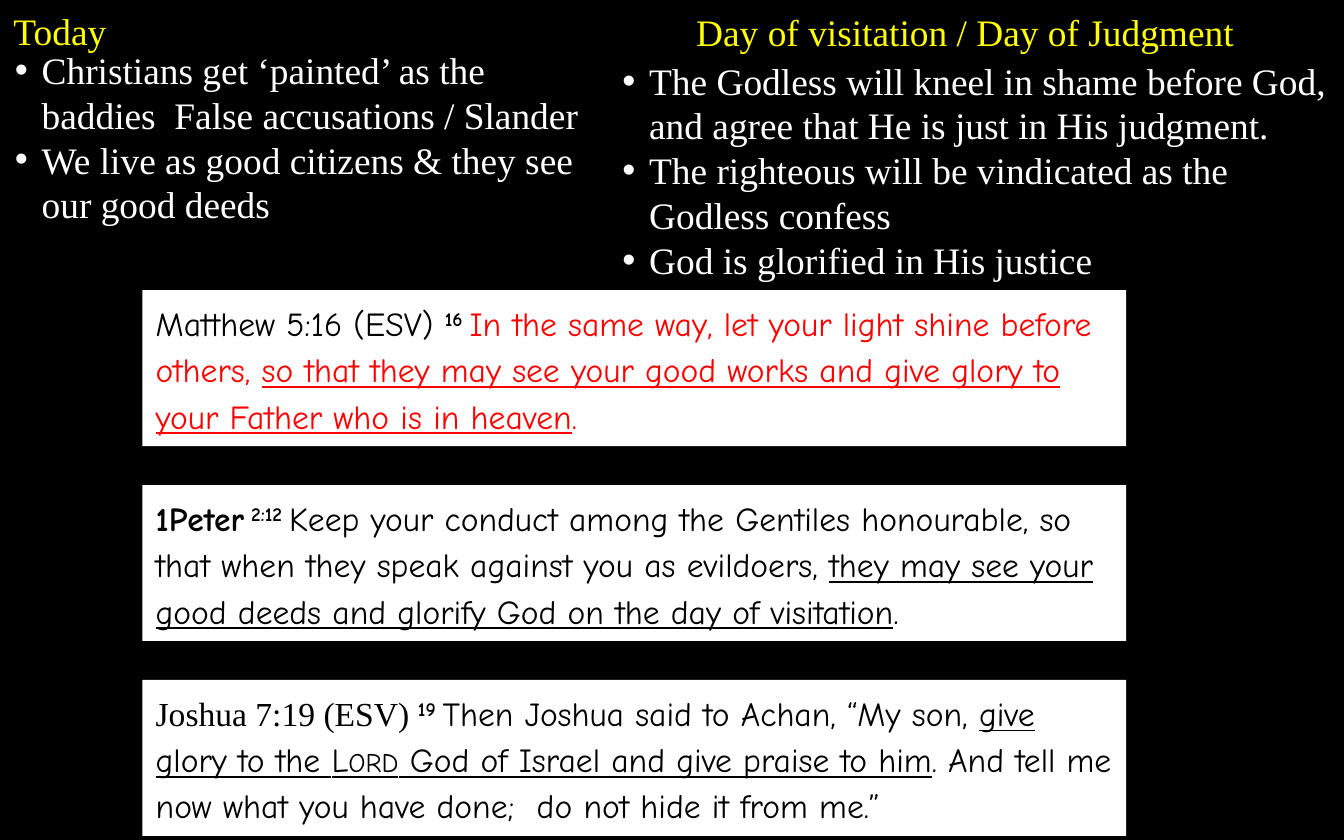
from pptx import Presentation
from pptx.dml.color import RGBColor
from pptx.enum.shapes import MSO_SHAPE
from pptx.enum.text import MSO_ANCHOR, MSO_AUTO_SIZE, PP_ALIGN
from pptx.oxml.ns import qn
from pptx.util import Inches, Pt
from lxml.etree import SubElement

COLOURS = {"black": "000000", "white": "FFFFFF", "yellow": "FFFF00", "red": "FF0000"}
SERIF, HAND = "Times New Roman", "Comic Neue"

# Content: placeholder index, box (left, top, width, height), text
HEADINGS = [
    (1, (0, 0.01, 1.65, 0.44), "Today"),
    (3, (5.08, 0.02, 4.58, 0.44), "Day of visitation / Day of Judgment"),
]
LISTS = [
    (2, (0.01, 0.3, 4.44, 1.45), [
        "Christians get ‘painted’ as the baddies  False accusations / Slander",
        "We live as good citizens & they see our good deeds",
    ]),
    (4, (4.53, 0.38, 5.47, 1.78), [
        "The Godless will kneel in shame before God, and agree that He is just in His judgment.",
        "The righteous will be vindicated as the Godless confess",
        "God is glorified in His justice",
    ]),
]
# Each verse is a list of runs: text and format
NUMBER = {"bold": True, "raised": True}
RED = {"colour": "red"}
UNDERLINED = {"underline": True}
VERSES = [
    [
        ("Matthew 5:16 (ESV) ", {}),
        ("16 ", NUMBER),
        ("In the same way, let your light shine before others, ", RED),
        ("so that they may see your good works and give glory to your Father who is in heaven",
         RED | UNDERLINED),
        (".", RED),
    ],
    [
        ("1Peter", {"bold": True}),
        (" 2:12 ", NUMBER),
        ("Keep your conduct among the Gentiles honourable, so that when they speak "
         "against you as evildoers, ", {}),
        ("they may see your good deeds and glorify God on the day of visitation", UNDERLINED),
        (".", {}),
    ],
    [
        ("Joshua 7:19 (ESV) ", {"font": SERIF}),
        ("19 ", NUMBER),
        ("Then Joshua said to Achan, “My son, ", {}),
        ("give glory to the ", UNDERLINED),
        ("Lord", UNDERLINED | {"small_caps": True}),
        (" God of Israel and give praise to him", UNDERLINED),
        (". And tell me now what you have done;  do not hide it from me.”", {}),
    ],
]
VERSE_LEFT, VERSE_TOP, VERSE_WIDTH, VERSE_HEIGHT, VERSE_STEP = 1.06, 2.16, 7.32, 1.16, 1.45


def rgb(name):
    return RGBColor.from_string(COLOURS[name])


def add_run(paragraph, text, font=HAND, size=18, colour="black", bold=False,
            underline=False, raised=False, small_caps=False):
    run = paragraph.add_run()
    run.text = text
    run.font.name, run.font.size = font, Pt(size)
    run.font.bold, run.font.underline = bold, underline
    run.font.color.rgb = rgb(colour)
    properties = run.font._element
    if raised:
        properties.set("baseline", "30000")
    if small_caps:
        properties.set("cap", "small")


def add_bullet(paragraph):
    properties = paragraph._p.get_or_add_pPr()
    properties.set("marL", str(Inches(0.2)))
    properties.set("indent", str(-Inches(0.2)))
    SubElement(properties, qn("a:buFont")).set("typeface", "Arial")
    SubElement(properties, qn("a:buChar")).set("char", "•")


def fill_placeholder(slide, index, box, lines, colour, bulleted=False):
    shape = slide.placeholders[index]
    shape.left, shape.top, shape.width, shape.height = map(Inches, box)
    frame = shape.text_frame
    frame.auto_size = MSO_AUTO_SIZE.NONE
    frame.vertical_anchor = MSO_ANCHOR.TOP
    for number, line in enumerate(lines):
        paragraph = frame.add_paragraph() if number else frame.paragraphs[0]
        paragraph.space_before = Pt(0)
        if bulleted:
            add_bullet(paragraph)
        add_run(paragraph, line, font=SERIF, size=20, colour=colour)


def add_verse(slide, top, runs):
    shape = slide.shapes.add_shape(MSO_SHAPE.RECTANGLE, Inches(VERSE_LEFT), Inches(top),
                                   Inches(VERSE_WIDTH), Inches(VERSE_HEIGHT))
    shape.shadow.inherit = False
    shape.fill.solid()
    shape.fill.fore_color.rgb = rgb("white")
    shape.line.fill.background()
    frame = shape.text_frame
    frame.word_wrap = True
    frame.vertical_anchor = MSO_ANCHOR.TOP
    paragraph = frame.paragraphs[0]
    paragraph.alignment = PP_ALIGN.LEFT
    paragraph.line_spacing = 1.15
    for text, style in runs:
        add_run(paragraph, text, **style)


def main():
    presentation = Presentation()
    presentation.slide_width, presentation.slide_height = Inches(10), Inches(6.25)
    comparison = presentation.slide_layouts.get_by_name("Comparison")
    slide = presentation.slides.add_slide(comparison)
    slide.background.fill.solid()
    slide.background.fill.fore_color.rgb = rgb("black")

    # The two column headings stand in for a slide title
    title = slide.shapes.title._element
    title.getparent().remove(title)

    # Two columns: heading and bullet list
    for index, box, text in HEADINGS:
        fill_placeholder(slide, index, box, [text], "yellow")
    for index, box, lines in LISTS:
        fill_placeholder(slide, index, box, lines, "white", bulleted=True)

    # Stack of verse panels
    for row, runs in enumerate(VERSES):
        add_verse(slide, VERSE_TOP + row * VERSE_STEP, runs)

    presentation.save("out.pptx")


if __name__ == "__main__":
    main()
